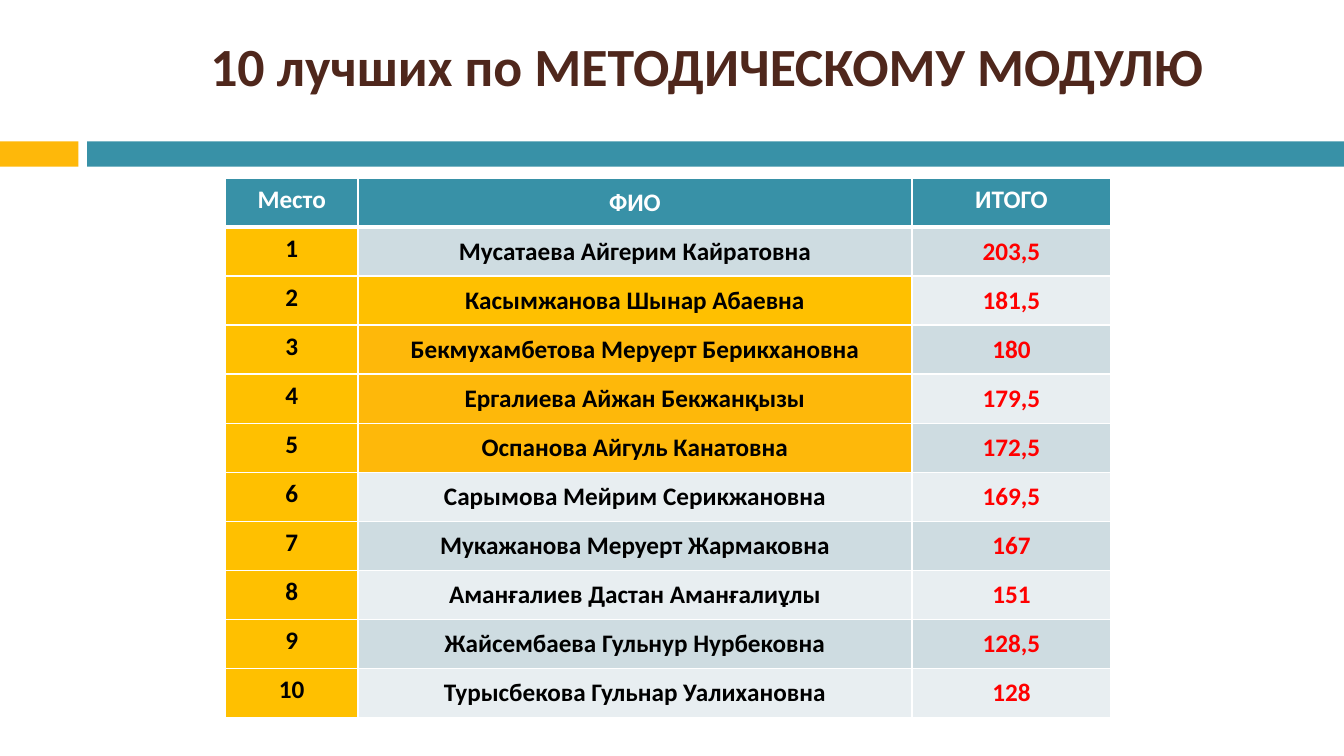
from lxml.etree import SubElement
from pptx import Presentation
from pptx.dml.color import RGBColor
from pptx.enum.shapes import MSO_SHAPE
from pptx.enum.text import MSO_ANCHOR, PP_ALIGN
from pptx.oxml.ns import qn
from pptx.util import Cm, Pt

WHITE = RGBColor(0xFF, 0xFF, 0xFF)
BLACK = RGBColor(0x00, 0x00, 0x00)
RED = RGBColor(0xFF, 0x00, 0x00)
BROWN = RGBColor(0x4F, 0x27, 0x1C)
TEAL = RGBColor(0x38, 0x91, 0xA7)
ORANGE = RGBColor(0xFE, 0xB8, 0x0A)
GOLD = RGBColor(0xFF, 0xC0, 0x00)
DARK_BAND = RGBColor(0xCE, 0xDC, 0xE1)
LIGHT_BAND = RGBColor(0xE8, 0xEE, 0xF1)

FONT = "Calibri"
HEADERS = ("Место", "ФИО", "ИТОГО")
RESULTS = (
    ("Мусатаева Айгерим Кайратовна", "203,5"),
    ("Касымжанова Шынар Абаевна", "181,5"),
    ("Бекмухамбетова Меруерт Берикхановна", "180"),
    ("Ергалиева Айжан Бекжанқызы", "179,5"),
    ("Оспанова Айгуль Канатовна", "172,5"),
    ("Сарымова Мейрим Серикжановна", "169,5"),
    ("Мукажанова Меруерт Жармаковна", "167"),
    ("Аманғалиев Дастан Аманғалиұлы", "151"),
    ("Жайсембаева Гульнур Нурбековна", "128,5"),
    ("Турысбекова Гульнар Уалихановна", "128"),
)
NAME_HIGHLIGHTS = {2: GOLD, 3: ORANGE, 4: ORANGE, 5: ORANGE}
COLUMN_SHARES = (0.15, 0.625, 0.225)


def format_paragraph(paragraph, size, color):
    paragraph.alignment = PP_ALIGN.CENTER
    paragraph.font.name = FONT
    paragraph.font.size = Pt(size)
    paragraph.font.bold = True
    paragraph.font.color.rgb = color


def add_title(slide, left, top, width, height):
    title = slide.shapes.title
    title.left, title.top, title.width, title.height = left, top, width, height
    title.text_frame.text = "10 лучших по МЕТОДИЧЕСКОМУ МОДУЛЮ"
    title.text_frame.vertical_anchor = MSO_ANCHOR.MIDDLE
    format_paragraph(title.text_frame.paragraphs[0], 32, BROWN)


def add_divider(slide, left, top, width, height):
    accent_width = Cm(1.65)
    gap = Cm(0.18)
    bar_offset = accent_width + gap
    for offset, bar_width, color in (
        (0, accent_width, ORANGE),
        (bar_offset, width - bar_offset, TEAL),
    ):
        bar = slide.shapes.add_shape(
            MSO_SHAPE.RECTANGLE, left + offset, top, bar_width, height
        )
        bar.shadow.inherit = False
        bar.fill.solid()
        bar.fill.fore_color.rgb = color
        bar.line.fill.background()


def set_borders(cell, top_width, bottom_width):
    properties = cell._tc.get_or_add_tcPr()
    widths = {"lnL": 1, "lnR": 1, "lnT": top_width, "lnB": bottom_width}
    for side, width in widths.items():
        line = SubElement(properties, qn(f"a:{side}"), w=str(Pt(width)))
        fill = SubElement(line, qn("a:solidFill"))
        SubElement(fill, qn("a:srgbClr"), val=str(WHITE))


def fill_cell(cell, text, text_color, fill_color):
    cell.text = text
    format_paragraph(cell.text_frame.paragraphs[0], 15, text_color)
    cell.fill.solid()
    cell.fill.fore_color.rgb = fill_color


def center_cell(cell):
    cell.vertical_anchor = MSO_ANCHOR.MIDDLE
    cell.margin_left = cell.margin_right = 0
    cell.margin_top = cell.margin_bottom = 0


def add_ranking(slide, left, top, width, height):
    row_count = len(RESULTS) + 1
    table = slide.shapes.add_table(
        row_count, len(HEADERS), left, top, width, height
    ).table
    for column, share in zip(table.columns, COLUMN_SHARES):
        column.width = int(width * share)
    for index, row in enumerate(table.rows):
        row.height = height // row_count
        for cell in row.cells:
            set_borders(cell, 3 if index == 1 else 1, 3 if index == 0 else 1)

    for column, header in enumerate(HEADERS):
        fill_cell(table.cell(0, column), header, WHITE, TEAL)
    table.cell(0, 1).vertical_anchor = MSO_ANCHOR.MIDDLE

    for place, (name, total) in enumerate(RESULTS, start=1):
        band = DARK_BAND if place % 2 else LIGHT_BAND
        place_cell, name_cell, total_cell = table.rows[place].cells
        fill_cell(place_cell, str(place), BLACK, GOLD)
        fill_cell(name_cell, name, BLACK, NAME_HIGHLIGHTS.get(place, band))
        fill_cell(total_cell, total, RED, band)
        center_cell(name_cell)
        center_cell(total_cell)


def main():
    presentation = Presentation()
    presentation.slide_width = Cm(28.22)
    presentation.slide_height = Cm(15.88)
    slide = presentation.slides.add_slide(presentation.slide_layouts[5])
    add_divider(slide, 0, Cm(2.97), presentation.slide_width, Cm(0.53))
    add_title(slide, Cm(2.26), Cm(0.1), Cm(25.17), Cm(2.54))
    add_ranking(slide, Cm(4.73), Cm(3.74), Cm(18.6), Cm(11.33))
    presentation.save("out.pptx")


if __name__ == "__main__":
    main()
